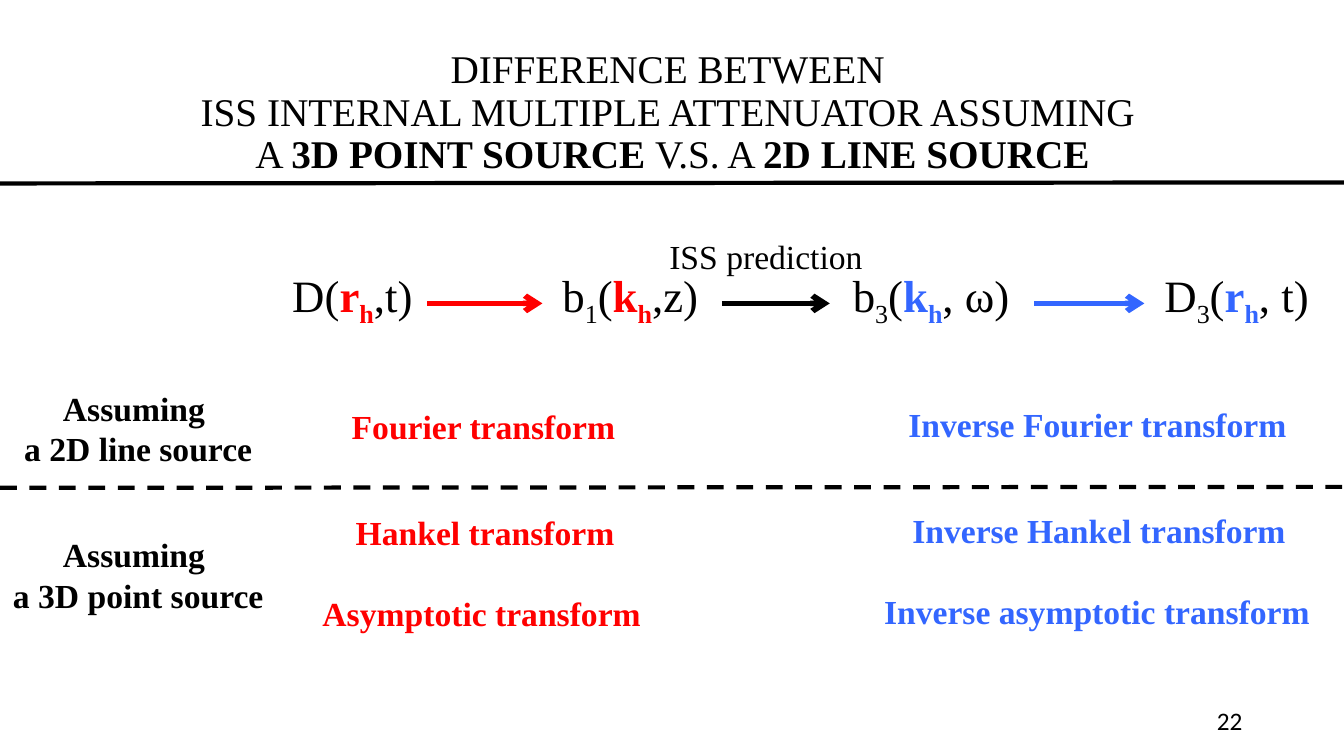
from lxml.etree import SubElement
from pptx import Presentation
from pptx.dml.color import RGBColor
from pptx.enum.dml import MSO_LINE
from pptx.enum.shapes import MSO_CONNECTOR
from pptx.enum.text import MSO_ANCHOR, PP_ALIGN
from pptx.oxml.ns import qn
from pptx.util import Emu, Pt

PX = 9144  # 100 px to the inch
SLIDE_W, SLIDE_H = 1333, 750
SERIF, SANS = "Times New Roman", "Calibri"
BLACK = RGBColor(0x00, 0x00, 0x00)
RED = RGBColor(0xFF, 0x00, 0x00)
BLUE = RGBColor(0x33, 0x66, 0xFF)


def px(length):
    return Emu(length * PX)


def add_text(slide, left, top, width, height, lines, size=24, color=BLACK,
             bold=False, font=SERIF, align=PP_ALIGN.LEFT):
    """Add a text box with one paragraph for each line; return its frame."""
    frame = slide.shapes.add_textbox(px(left), px(top), px(width), px(height)).text_frame
    frame.word_wrap = True
    frame.text = "\n".join(lines)
    for paragraph in frame.paragraphs:
        paragraph.alignment = align
        paragraph.font.name = font
        paragraph.font.size = Pt(size)
        paragraph.font.bold = bold
        paragraph.font.color.rgb = color
    return frame


def add_line(slide, start, end, color=BLACK, weight=3, dash=None, arrow=False):
    line = slide.shapes.add_connector(
        MSO_CONNECTOR.STRAIGHT, *(px(value) for value in (*start, *end)))
    line.line.color.rgb = color
    line.line.width = Pt(weight)
    if dash:
        line.line.dash_style = dash
    properties = line._element.spPr
    if arrow:
        SubElement(properties.find(qn("a:ln")), qn("a:tailEnd"), type="arrow")
    SubElement(properties, qn("a:effectLst"))


def add_title(slide, left, top, width, height):
    # The paragraph keeps the theme font, which sets the pitch at the breaks
    frame = add_text(slide, left, top, width, height, [""], 28,
                     font=SANS, align=PP_ALIGN.CENTER)
    frame.vertical_anchor = MSO_ANCHOR.MIDDLE
    heading = frame.paragraphs[0]
    heading.line_spacing = 0.9
    title_lines = [
        [("DIFFERENCE BETWEEN ", False)],
        [("ISS INTERNAL MULTIPLE ATTENUATOR ASSUMING ", False)],
        [("A ", False), ("3D POINT SOURCE ", True),
         ("V.S. A ", False), ("2D LINE SOURCE", True)],
    ]
    for number, title_line in enumerate(title_lines):
        if number:
            heading.add_line_break()
        for words, bold in title_line:
            run = heading.add_run()
            run.text = words
            run.font.name = SERIF
            run.font.bold = bold


def add_formula(slide, left, top, width, name, index, variable, rest, color):
    """Write name_index(variable_h rest, with the variable in colour."""
    frame = add_text(slide, left, top, width, 64, [""], 32)
    parts = [(name, False, False), (index, False, True), ("(", False, False),
             (variable, True, False), ("h", True, True), (rest, False, False)]
    for symbol, is_variable, is_subscript in parts:
        if not symbol:
            continue
        run = frame.paragraphs[0].add_run()
        run.text = symbol
        if is_variable:
            run.font.bold = True
            run.font.color.rgb = color
        if is_subscript:
            run.font._element.set("baseline", "-25000")


def add_prediction_flow(slide, left, top):
    """Four formulas joined by arrows, with a caption over the middle one."""
    formulas = [
        (0, 150, "D", "", "r", ",t)", RED),
        (268, 178, "b", "1", "k", ",z)", RED),
        (556, 201, "b", "3", "k", ", ω)", BLUE),
        (865, 169, "D", "3", "r", ", t)", BLUE),
    ]
    for offset, width, *symbols in formulas:
        add_formula(slide, left + offset, top + 32, width, *symbols)
    for start, end, color in [(144, 258, RED), (436, 543, BLACK), (746, 855, BLUE)]:
        add_line(slide, (left + start, top + 72), (left + end, top + 72),
                 color, 4, arrow=True)
    add_text(slide, left + 374, top, 224, 51, ["ISS prediction"])


def add_assumption(slide, left, top, label_top, source, transforms):
    """One source assumption: label, forward and inverse transforms."""
    add_text(slide, left, top + label_top, 274, 91, ["Assuming ", source],
             bold=True, align=PP_ALIGN.CENTER)
    for row, (forward, forward_w, inverse, inverse_w) in enumerate(transforms):
        row_top = top + 80 * row
        add_text(slide, left + 482 - forward_w // 2, row_top + 2, forward_w, 50,
                 [forward], color=RED, bold=True)
        add_text(slide, left + 1090 - inverse_w // 2, row_top, inverse_w, 50,
                 [inverse], color=BLUE, bold=True)


def build_slide(slide):
    # Heading and rule
    add_title(slide, 92, 40, 1150, 145)
    add_line(slide, (0, 182), (SLIDE_W, 181))
    # Prediction steps
    add_prediction_flow(slide, 280, 229)
    # Comparison of the two sources
    add_assumption(slide, 0, 396, -16, "a 2D line source", [
        ("Fourier transform", 287, "Inverse Fourier transform", 399)])
    add_line(slide, (0, 484), (SLIDE_W, 483), dash=MSO_LINE.DASH)
    add_assumption(slide, 0, 501, 24, "a 3D point source", [
        ("Hankel transform", 278, "Inverse Hankel transform", 390),
        ("Asymptotic transform", 344, "Inverse asymptotic transform", 447)])
    # Page number
    add_text(slide, 942, 695, 300, 40, ["22"], 18, font=SANS, align=PP_ALIGN.RIGHT)


def main():
    deck = Presentation()
    deck.slide_width, deck.slide_height = px(SLIDE_W), px(SLIDE_H)
    build_slide(deck.slides.add_slide(deck.slide_layouts[6]))
    deck.save("out.pptx")


if __name__ == "__main__":
    main()
